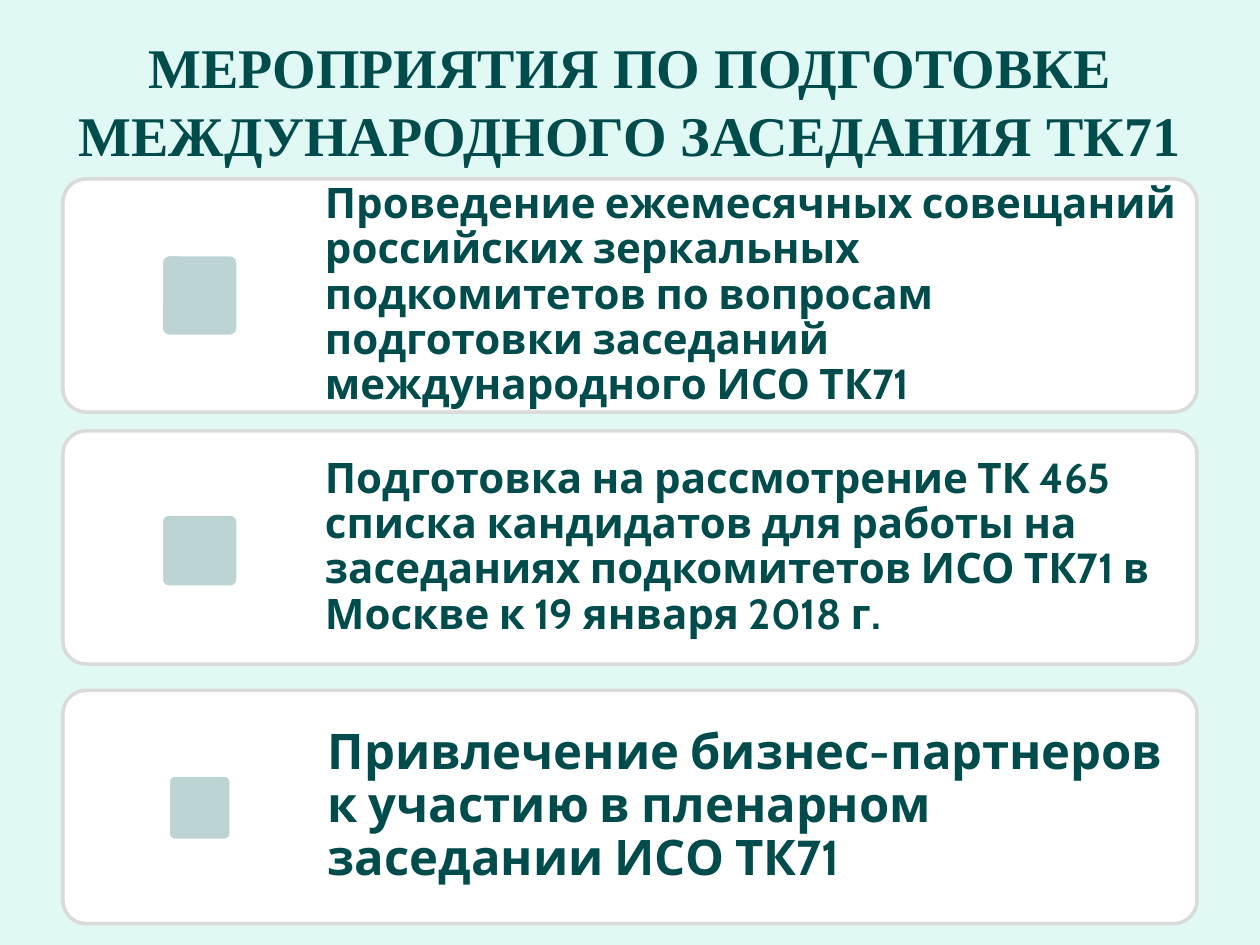
from pptx import Presentation
from pptx.dml.color import RGBColor
from pptx.enum.shapes import MSO_SHAPE
from pptx.enum.text import MSO_ANCHOR, PP_ALIGN
from pptx.util import Pt

ROUND = MSO_SHAPE.ROUNDED_RECTANGLE
MIDDLE = MSO_ANCHOR.MIDDLE
LEFT, CENTER = PP_ALIGN.LEFT, PP_ALIGN.CENTER

MINT = RGBColor(0xE0, 0xF9, 0xF5)
TEAL = RGBColor(0x00, 0x4C, 0x4C)
WHITE = RGBColor(0xFF, 0xFF, 0xFF)
GRAY = RGBColor(0xDA, 0xDA, 0xDA)
SAGE = RGBColor(0xBD, 0xD4, 0xD4)

EDGE, WIDE, HIGH = 36, 648, 133.2
INDENT = 142.6
MID = 114.1

deck = Presentation()
deck.slide_width, deck.slide_height = Pt(720), Pt(540)
slide = deck.slides.add_slide(deck.slide_layouts[6])
slide.background.fill.solid()
slide.background.fill.fore_color.rgb = MINT


def add_box(x, y, w, h, fill, line):
    box = slide.shapes.add_shape(ROUND, Pt(x), Pt(y), Pt(w), Pt(h))
    box.adjustments[0] = 0.1
    box.shadow.inherit = False
    box.fill.solid()
    box.fill.fore_color.rgb = fill
    box.line.color.rgb = line
    box.line.width = Pt(2)


def add_text(x, y, w, h, words, font, size, align, space, pad_x, pad_y):
    frame = slide.shapes.add_textbox(Pt(x), Pt(y), Pt(w), Pt(h)).text_frame
    frame.word_wrap = True
    frame.vertical_anchor = MIDDLE
    frame.margin_left = frame.margin_right = Pt(pad_x)
    frame.margin_top = frame.margin_bottom = Pt(pad_y)
    para = frame.paragraphs[0]
    para.alignment = align
    para.line_spacing = space
    run = para.add_run()
    run.text = words
    run.font.name = font
    run.font.size = Pt(size)
    run.font.bold = True
    run.font.color.rgb = TEAL


add_text(EDGE, 12.24, WIDE, 90,
         "МЕРОПРИЯТИЯ ПО ПОДГОТОВКЕ МЕЖДУНАРОДНОГО ЗАСЕДАНИЯ ТК71",
         "Times New Roman", 32, CENTER, 1.0, 7.2, 3.6)

cards = [
    (102.24, 24, 7.2, 43.9, 46.8, 0,
     "Проведение ежемесячных совещаний российских зеркальных подкомитетов "
     "по вопросам подготовки заседаний международного ИСО ТК71"),
    (246.24, 24, 7.2, 43.9, 41.8, 1.8,
     "Подготовка на рассмотрение ТК 465 списка кандидатов для работы на "
     "заседаниях подкомитетов ИСО ТК71 в Москве к 19 января 2018 г."),
    (394.56, 28, 8.64, 36, 37.4, 0.4,
     "Привлечение бизнес-партнеров к участию в пленарном заседании ИСО ТК71"),
]

for top, size, pad, icon_w, icon_h, shift, words in cards:
    add_box(EDGE, top, WIDE, HIGH, WHITE, GRAY)
    add_text(EDGE + INDENT, top, WIDE - INDENT, HIGH, words,
             "Cabin", size, LEFT, 0.9, pad, pad)
    add_box(MID - icon_w / 2, top + (HIGH - icon_h) / 2 + shift,
            icon_w, icon_h, SAGE, WHITE)

deck.save("out.pptx")
